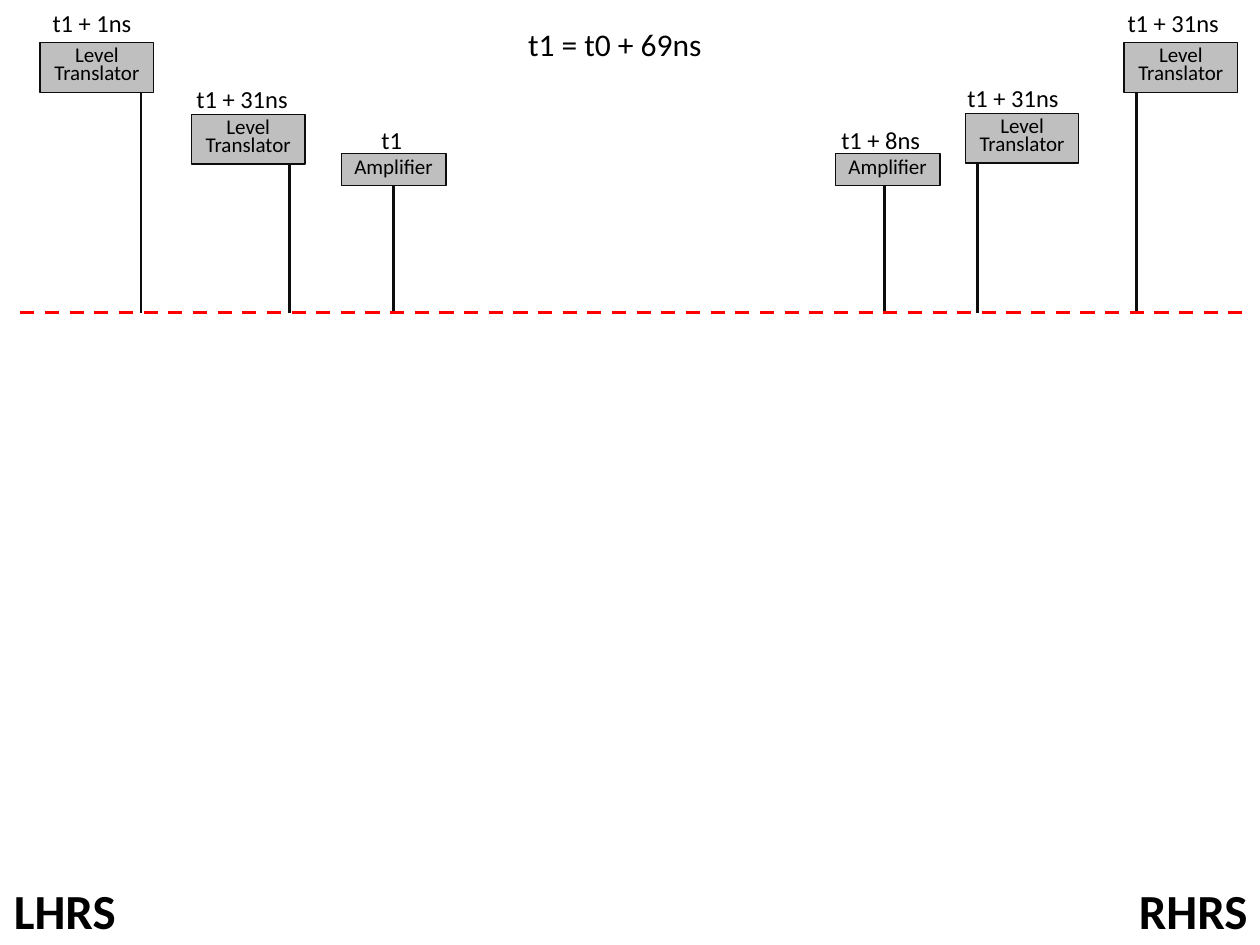
from dataclasses import dataclass
from typing import Optional

from lxml import etree
from pptx import Presentation
from pptx.dml.color import RGBColor
from pptx.enum import dml, shapes, text
from pptx.oxml import ns
from pptx.util import Cm, Pt

BLACK = RGBColor(0x00, 0x00, 0x00)
OUTLINE = RGBColor(0x0D, 0x0D, 0x0D)
GRAY = RGBColor(0xBF, 0xBF, 0xBF)
RED = RGBColor(0xFF, 0x00, 0x00)
FONT = "Calibri"
BUS_Y = 6.3


@dataclass(frozen=True)
class BoxKind:
    lines: tuple[str, ...]
    width: float
    height: float


@dataclass(frozen=True)
class Label:
    words: str
    left: float
    top: float
    width: float
    height: float
    size: int = 14
    bold: bool = False


@dataclass(frozen=True)
class Stage:
    """A box with its delay label; without lead_x the lead starts at the middle."""
    kind: BoxKind
    left: float
    top: float
    delay: Label
    lead_x: Optional[float] = None


TRANSLATOR = BoxKind(("Level", "Translator"), 2.29, 1.0)
AMPLIFIER = BoxKind(("Amplifier",), 2.11, 0.64)

STAGES = (
    Stage(TRANSLATOR, 0.81, 0.86, Label("t1 + 1ns", 0.81, 0.03, 2.11, 0.86), 2.84),
    Stage(TRANSLATOR, 3.86, 2.31, Label("t1 + 31ns", 3.71, 1.57, 2.36, 0.86), 5.84),
    Stage(AMPLIFIER, 6.88, 3.1, Label("t1", 7.44, 2.39, 0.94, 0.86)),
    Stage(AMPLIFIER, 16.84, 3.1, Label("t1 + 8ns", 16.71, 2.39, 2.11, 0.86), 17.83),
    Stage(TRANSLATOR, 19.46, 2.29, Label("t1 + 31ns", 19.25, 1.55, 2.36, 0.86), 19.71),
    Stage(TRANSLATOR, 22.66, 0.86, Label("t1 + 31ns", 22.48, 0.03, 2.36, 0.86), 22.91),
)
TITLE = Label("t1 = t0 + 69ns", 10.39, 0.38, 4.04, 1.02, 18)
SIDES = (
    Label("LHRS", 0.03, 17.63, 2.59, 1.45, 28, True),
    Label("RHRS", 22.71, 17.63, 2.74, 1.45, 28, True),
)


def add_run(paragraph, words: str, size: int, bold: bool = False) -> None:
    run = paragraph.add_run()
    run.text = words
    run.font.name = FONT
    run.font.size = Pt(size)
    run.font.bold = bold
    run.font.color.rgb = BLACK


def fill_label(shape, label: Label) -> None:
    """Place a text box or title and write its label."""
    shape.left, shape.top = Cm(label.left), Cm(label.top)
    shape.width, shape.height = Cm(label.width), Cm(label.height)
    frame = shape.text_frame
    frame.word_wrap = False
    frame.auto_size = text.MSO_AUTO_SIZE.SHAPE_TO_FIT_TEXT
    frame.vertical_anchor = text.MSO_ANCHOR.TOP
    paragraph = frame.paragraphs[0]
    paragraph.alignment = text.PP_ALIGN.LEFT
    add_run(paragraph, label.words, label.size, label.bold)


def add_label(slide, label: Label) -> None:
    fill_label(slide.shapes.add_textbox(0, 0, 0, 0), label)


def add_line(slide, x1: float, y1: float, x2: float, y2: float,
             color: RGBColor, weight: float):
    line = slide.shapes.add_connector(
        shapes.MSO_CONNECTOR.STRAIGHT, Cm(x1), Cm(y1), Cm(x2), Cm(y2))
    line.line.color.rgb = color
    line.line.width = Pt(weight)
    etree.SubElement(line._element.spPr, ns.qn("a:effectLst"))
    return line


def add_box(slide, stage: Stage):
    kind = stage.kind
    box = slide.shapes.add_shape(
        shapes.MSO_SHAPE.RECTANGLE, Cm(stage.left), Cm(stage.top),
        Cm(kind.width), Cm(kind.height))
    box.shadow.inherit = False
    box.fill.solid()
    box.fill.fore_color.rgb = GRAY
    box.line.color.rgb = OUTLINE
    box.line.width = Pt(0.75)
    frame = box.text_frame
    frame.word_wrap = False
    frame.auto_size = text.MSO_AUTO_SIZE.SHAPE_TO_FIT_TEXT
    frame.vertical_anchor = text.MSO_ANCHOR.TOP
    for index, words in enumerate(kind.lines):
        paragraph = frame.add_paragraph() if index else frame.paragraphs[0]
        paragraph.alignment = text.PP_ALIGN.CENTER
        paragraph.line_spacing = 0.7
        add_run(paragraph, words, 12)
    return box


def add_stage(slide, stage: Stage) -> None:
    box = add_box(slide, stage)
    joined = stage.lead_x is None
    lead_x = stage.left + stage.kind.width / 2 if joined else stage.lead_x
    bottom = stage.top + stage.kind.height
    lead = add_line(slide, lead_x, bottom, lead_x, BUS_Y, OUTLINE, 1.5)
    if joined:
        lead.begin_connect(box, 2)
    add_label(slide, stage.delay)


def main() -> None:
    presentation = Presentation()
    presentation.slide_width, presentation.slide_height = Cm(25.4), Cm(19.05)
    slide = presentation.slides.add_slide(presentation.slide_layouts[5])
    fill_label(slide.shapes.title, TITLE)
    for stage in STAGES:
        add_stage(slide, stage)
    bus = add_line(slide, 0.41, BUS_Y, 25.1, BUS_Y, RED, 2)
    bus.line.dash_style = dml.MSO_LINE.DASH
    for side in SIDES:
        add_label(slide, side)
    presentation.save("out.pptx")


if __name__ == "__main__":
    main()
